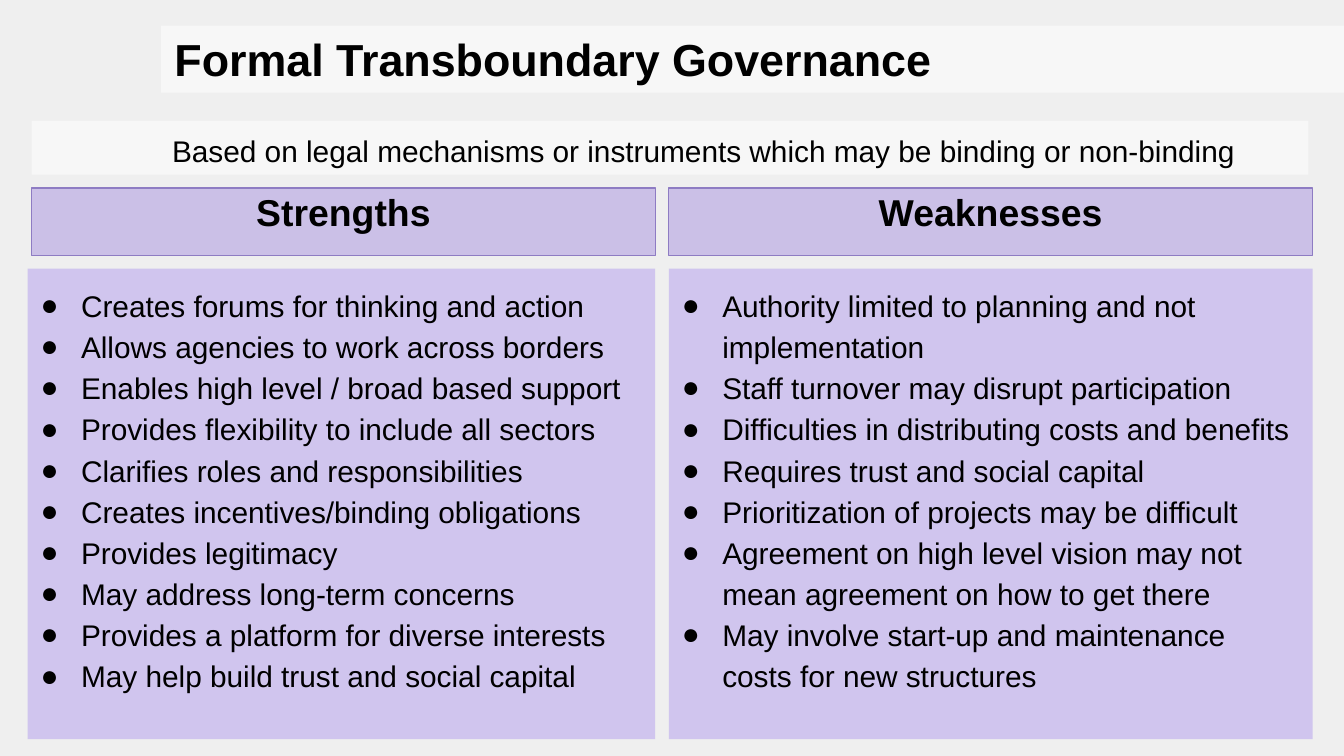
from dataclasses import dataclass, field

import lxml.etree
import pptx
import pptx.dml.color
import pptx.enum.shapes
import pptx.enum.text
import pptx.oxml.ns
import pptx.util

# The slide is a grid of square cells, 0.1 inch each
CELL = 0.1
COLUMNS, ROWS = 100, 56.25
LEFT_COLUMN, RIGHT_COLUMN = 2.36, 49.76
RIGHT_WIDTH = 47.9
HEADING_ROW, LIST_ROW = 14, 20
HEADING_HEIGHT, LIST_HEIGHT = 5, 35

FONT = "Arial"
BLACK, WHITE, BACKGROUND = "000000", "FFFFFF", "EFEFEF"
LIST_FILL, HEADING_FILL, HEADING_LINE = "C7B8EE", "C0B2E5", "8E7CC3"
LEFT = pptx.enum.text.PP_ALIGN.LEFT
CENTER = pptx.enum.text.PP_ALIGN.CENTER
TOP = pptx.enum.text.MSO_ANCHOR.TOP
MIDDLE = pptx.enum.text.MSO_ANCHOR.MIDDLE


@dataclass
class Style:
    fill: str
    opacity: int
    size: int
    line: str = ""
    bold: bool = False
    bullet: str = ""
    margin: float = 0      # left indent, in cells
    hanging: float = 0     # first-line offset, in cells
    inset: float = 0.5     # top and bottom, in cells
    anchor: int = TOP
    paragraph: dict = field(default_factory=dict)


@dataclass
class Panel:
    column: float
    row: float
    width: float
    height: float
    style: Style
    lines: list[str]


TITLE = Style(WHITE, 55, 24, bold=True, paragraph={"alignment": LEFT})
SUBTITLE = Style(WHITE, 54, 16, margin=5, inset=1, anchor=MIDDLE,
                 paragraph={"alignment": CENTER, "line_spacing": 1.15})
HEADING = Style(HEADING_FILL, 76, 20, line=HEADING_LINE, bold=True,
                paragraph={"alignment": CENTER, "line_spacing": 0.9})
BULLETS = Style(LIST_FILL, 76, 16, bullet="●", margin=3, hanging=-3, inset=1,
                paragraph={"alignment": LEFT, "line_spacing": 1.15})

STRENGTHS = [
    "Creates forums for thinking and action",
    "Allows agencies to work across borders",
    "Enables high level / broad based support",
    "Provides flexibility to include all sectors",
    "Clarifies roles and responsibilities",
    "Creates incentives/binding obligations",
    "Provides legitimacy",
    "May address long-term concerns",
    "Provides a platform for diverse interests",
    "May help build trust and social capital",
]
WEAKNESSES = [
    "Authority limited to planning and not implementation",
    "Staff turnover may disrupt participation",
    "Difficulties in distributing costs and benefits",
    "Requires trust and social capital",
    "Prioritization of projects may be difficult",
    "Agreement on high level vision may not mean agreement on how to get there",
    "May involve start-up and maintenance costs for new structures",
]

PANELS = [
    Panel(2.05, LIST_ROW, 46.7, LIST_HEIGHT, BULLETS, STRENGTHS),
    Panel(RIGHT_COLUMN, LIST_ROW, RIGHT_WIDTH, LIST_HEIGHT, BULLETS, WEAKNESSES),
    Panel(LEFT_COLUMN, 9, 95, 4, SUBTITLE,
          ["Based on legal mechanisms or instruments which may be binding or non-binding"]),
    Panel(LEFT_COLUMN, HEADING_ROW, 46.4, HEADING_HEIGHT, HEADING, ["Strengths"]),
    Panel(RIGHT_COLUMN, HEADING_ROW, RIGHT_WIDTH, HEADING_HEIGHT, HEADING, ["Weaknesses"]),
    Panel(12, 1.9, 88, 5, TITLE, ["Formal Transboundary Governance"]),
]


def cells(count: float) -> pptx.util.Length:
    return pptx.util.Inches(count * CELL)


def color(value: str) -> pptx.dml.color.RGBColor:
    return pptx.dml.color.RGBColor.from_string(value)


def set_attributes(target: object, values: dict) -> None:
    for name, value in values.items():
        setattr(target, name, value)


def add_child(parent, tag: str, **attributes: str):
    child = lxml.etree.SubElement(parent, pptx.oxml.ns.qn(tag))
    for name, value in attributes.items():
        child.set(name, value)
    return child


def paint(box, style: Style) -> None:
    """Give a box its translucent fill and optional outline."""
    box.shadow.inherit = False
    box.fill.solid()
    box.fill.fore_color.rgb = color(style.fill)
    fill_color = box.fill._xPr.find(".//" + pptx.oxml.ns.qn("a:srgbClr"))
    add_child(fill_color, "a:alpha", val=str(style.opacity * 1000))
    if style.line:
        box.line.color.rgb = color(style.line)
        box.line.width = pptx.util.Pt(0.75)
    else:
        box.line.fill.background()


def write_paragraph(para, text: str, style: Style) -> None:
    properties = para._p.get_or_add_pPr()
    properties.set("marL", str(cells(style.margin)))
    properties.set("indent", str(cells(style.hanging)))
    if style.bullet:
        bullet_color = add_child(properties, "a:buClr")
        add_child(bullet_color, "a:srgbClr", val=BLACK)
        add_child(properties, "a:buSzPts", val=str(style.size * 100))
        add_child(properties, "a:buFont", typeface=FONT)
        add_child(properties, "a:buChar", char=style.bullet)
    set_attributes(para, style.paragraph)
    span = para.add_run()
    span.text = text
    set_attributes(span.font, {"name": FONT, "bold": style.bold,
                               "size": pptx.util.Pt(style.size)})
    span.font.color.rgb = color(BLACK)


def draw_panel(page, panel: Panel) -> None:
    style = panel.style
    box = page.shapes.add_shape(
        pptx.enum.shapes.MSO_SHAPE.RECTANGLE, cells(panel.column),
        cells(panel.row), cells(panel.width), cells(panel.height))
    paint(box, style)
    frame = box.text_frame
    set_attributes(frame, {
        "word_wrap": True, "vertical_anchor": style.anchor,
        "margin_left": cells(1), "margin_right": cells(1),
        "margin_top": cells(style.inset), "margin_bottom": cells(style.inset)})
    for index, text in enumerate(panel.lines):
        para = frame.add_paragraph() if index else frame.paragraphs[0]
        write_paragraph(para, text, style)


def main() -> None:
    deck = pptx.Presentation()
    set_attributes(deck, {"slide_width": cells(COLUMNS), "slide_height": cells(ROWS)})
    page = deck.slides.add_slide(deck.slide_layouts[6])
    page.background.fill.solid()
    page.background.fill.fore_color.rgb = color(BACKGROUND)
    for panel in PANELS:
        draw_panel(page, panel)
    deck.save("out.pptx")


if __name__ == "__main__":
    main()
